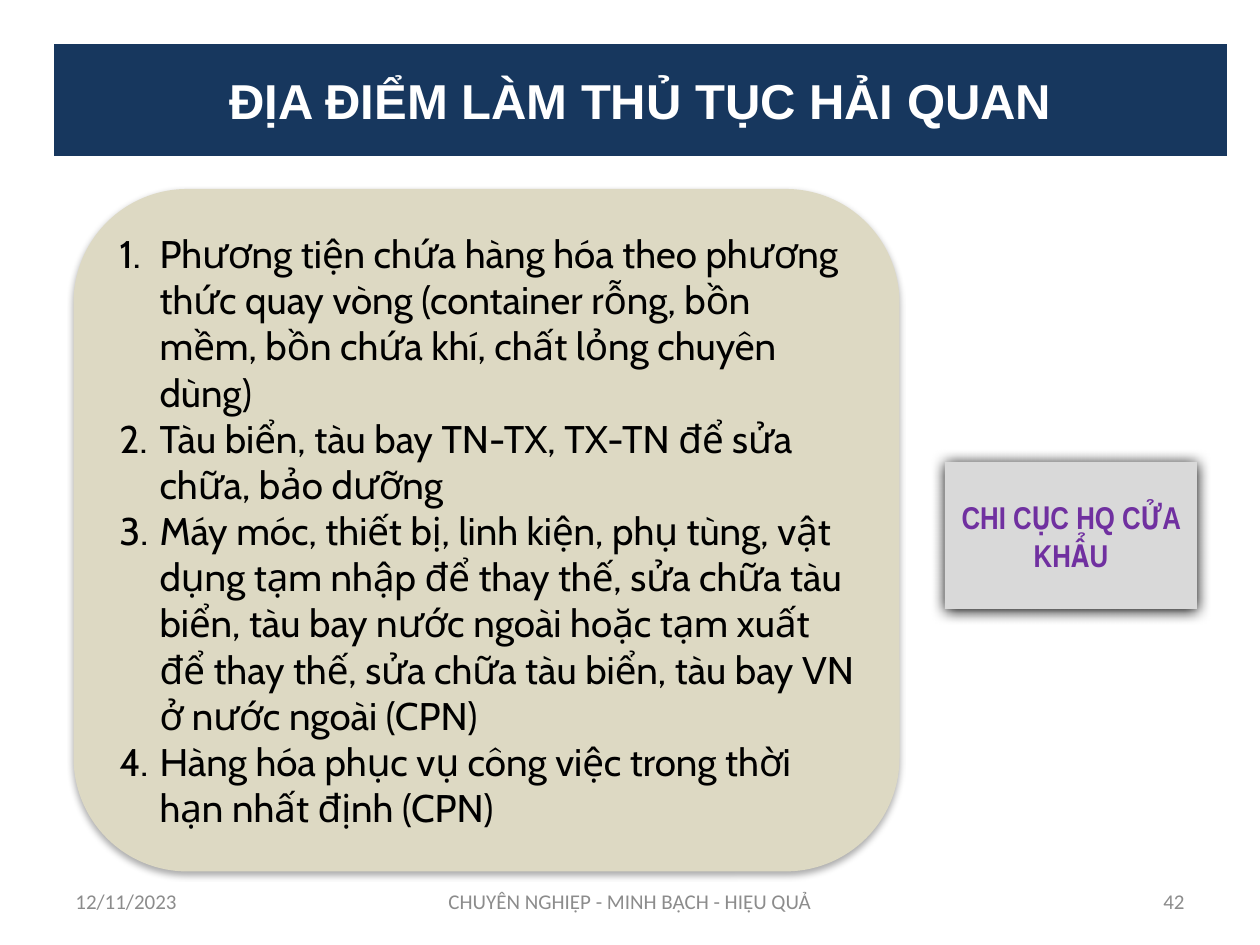
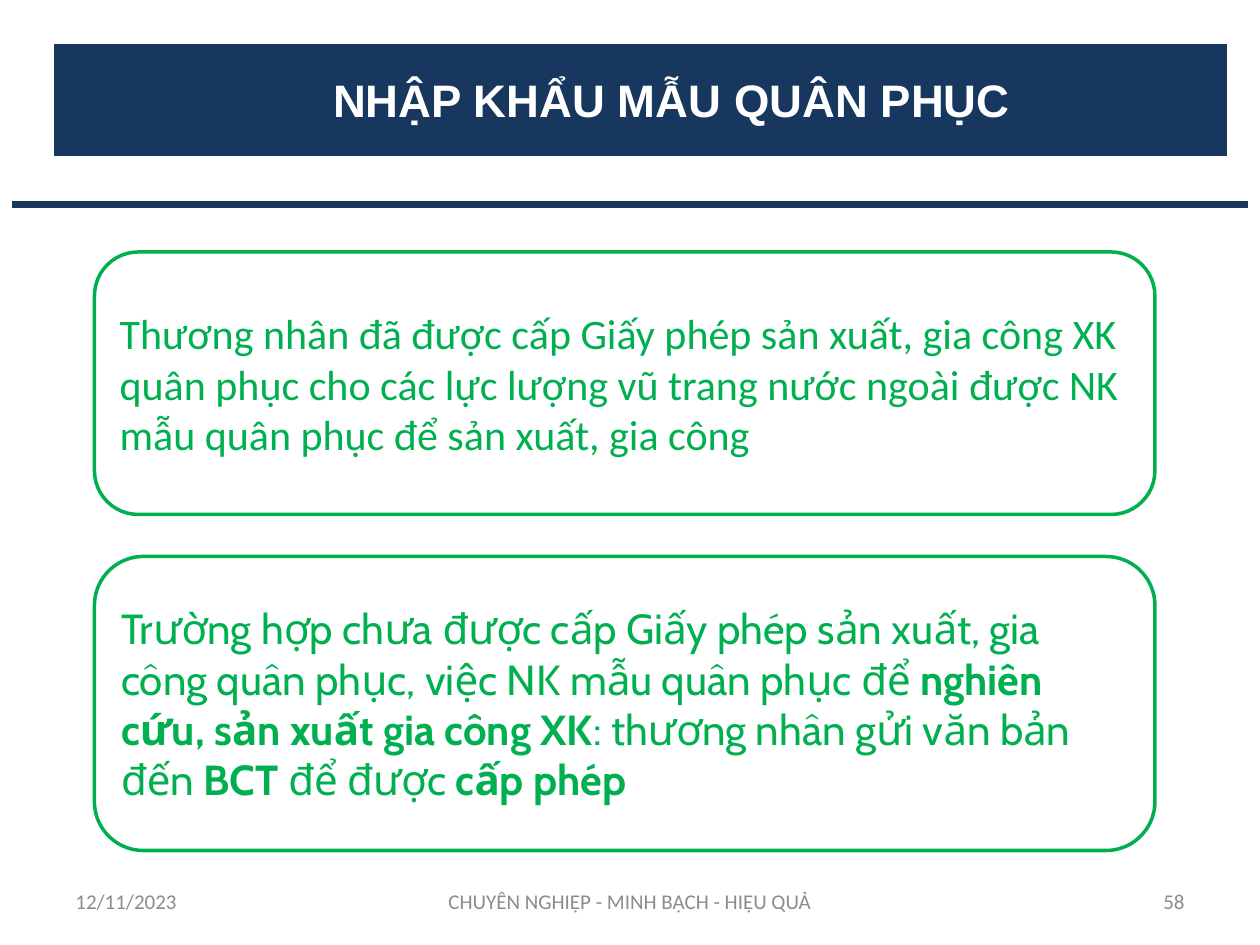
from lxml import etree
from pptx import Presentation
from pptx.dml.color import RGBColor
from pptx.enum import shapes, text
from pptx.oxml import ns
from pptx.util import Pt

NAVY, WHITE, GREEN, GREY = "17375E", "FFFFFF", "00B050", "8C8C8C"
SAND, SILVER, PURPLE, BLACK = "DDD9C3", "D9D9D9", "7030A0", "000000"
LEFT, CENTER, RIGHT = (text.PP_ALIGN.LEFT, text.PP_ALIGN.CENTER,
                       text.PP_ALIGN.RIGHT)
RECT = shapes.MSO_SHAPE.RECTANGLE
ROUND = shapes.MSO_SHAPE.ROUNDED_RECTANGLE
TITLE_AND_BODY, TITLE_ONLY = 1, 5

TITLE_FONT = dict(name="Arial", size=Pt(28), bold=True, color=WHITE)
FOOTER_FONT = dict(name="Calibri", size=Pt(12), color=GREY)
LIST_FONT = dict(name="Cabin", size=Pt(22), color=BLACK)
OFFICE_FONT = dict(name="Arial Narrow", size=Pt(18), bold=True, color=PURPLE)
CASE_FONT = dict(name="Calibri", size=Pt(24), color=GREEN)


def rgb(hex_color):
    return RGBColor.from_string(hex_color)


def sub(parent, tag, **attrs):
    """Add a DrawingML child element with the given attributes."""
    child = etree.SubElement(parent, ns.qn("a:" + tag))
    for key, value in attrs.items():
        child.set(key, str(value))
    return child


class Deck:
    def __init__(self):
        self.prs = Presentation()
        self.prs.slide_width, self.prs.slide_height = Pt(720), Pt(540)
        self.slide = None

    def new_slide(self, layout, title, number, size=28, indent=0):
        """Start a slide with its title band and footer."""
        self.slide = self.prs.slides.add_slide(self.prs.slide_layouts[layout])
        band = self.slide.shapes.title
        self.place(band, (30, 24, 672, 66))
        self.paint(band, NAVY, WHITE)
        self.fill_text(band, [title], dict(TITLE_FONT, size=Pt(size)), CENTER)
        band.text_frame.paragraphs[0]._p.get_or_add_pPr().set(
            "marL", str(Pt(indent)))
        for label, x, w, align in (
                ("12/11/2023", 36, 168, LEFT),
                ("CHUYÊN NGHIỆP - MINH BẠCH - HIỆU QUẢ", 246, 228, CENTER),
                (str(number), 516, 168, RIGHT)):
            sp = self.slide.shapes.add_textbox(Pt(x), Pt(500.5), Pt(w), Pt(28.75))
            self.fill_text(sp, [label], FOOTER_FONT, align)

    def place(self, sp, box):
        for name, value in zip(("left", "top", "width", "height"), box):
            setattr(sp, name, Pt(value))

    def paint(self, sp, fill, line=None):
        sp.fill.solid()
        sp.fill.fore_color.rgb = rgb(fill)
        if line:
            sp.line.color.rgb = rgb(line)
            sp.line.width = Pt(2)
        else:
            sp.line.fill.background()

    def shape(self, kind, box, fill, line=None, shadow=None):
        """Add a preset shape; shadow is (opacity %, blur, distance)."""
        sp = self.slide.shapes.add_shape(kind, *map(Pt, box))
        self.paint(sp, fill, line)
        sp.shadow.inherit = False
        if shadow:
            opacity, blur, dist = shadow
            effects = sp._element.spPr.find(ns.qn("a:effectLst"))
            outer = sub(effects, "outerShdw", blurRad=Pt(blur), dist=Pt(dist),
                        dir=90 * 60000, algn="ctr", rotWithShape=0)
            color = sub(outer, "srgbClr", val=BLACK)
            sub(color, "alpha", val=opacity * 1000)
        return sp

    def fill_text(self, sp, paragraphs, font, align=LEFT):
        """Fill a shape; a paragraph is a string or a list of (text, bold)."""
        tf = sp.text_frame
        tf.word_wrap = True
        tf.auto_size = text.MSO_AUTO_SIZE.NONE
        tf.vertical_anchor = text.MSO_ANCHOR.MIDDLE
        for i, content in enumerate(paragraphs):
            p = tf.add_paragraph() if i else tf.paragraphs[0]
            p.alignment, p.space_before = align, Pt(0)
            if isinstance(content, str):
                content = [(content, font.get("bold", False))]
            for words, bold in content:
                r = p.add_run()
                r.text = words
                for key, value in dict(font, bold=bold).items():
                    if key == "color":
                        r.font.color.rgb = rgb(value)
                    else:
                        setattr(r.font, key, value)

    def numbered_list(self, card, box, items, font):
        """Put the body placeholder on top of its card as a numbered list."""
        body = self.slide.placeholders[1]
        self.place(body, box)
        self.fill_text(body, items, font)
        for p in body.text_frame.paragraphs:
            pPr = p._p.get_or_add_pPr()
            pPr.set("marL", str(Pt(23)))
            pPr.set("indent", str(-Pt(23)))
            sub(pPr, "buFont", typeface="+mj-lt")
            sub(pPr, "buAutoNum", type="arabicPeriod")
        card._element.addnext(body._element)


def customs_places(deck):
    deck.new_slide(TITLE_AND_BODY, "ĐỊA ĐIỂM LÀM THỦ TỤC HẢI QUAN", 42)
    card = deck.shape(ROUND, (42, 108, 472, 390), SAND, shadow=(32, 3.5, 2.2))
    deck.numbered_list(card, (61, 127, 435, 352), [
        "Phương tiện chứa hàng hóa theo phương thức quay vòng (container rỗng, "
        "bồn mềm, bồn chứa khí, chất lỏng chuyên dùng)",
        "Tàu biển, tàu bay TN-TX, TX-TN để sửa chữa, bảo dưỡng",
        "Máy móc, thiết bị, linh kiện, phụ tùng, vật dụng tạm nhập để thay thế, "
        "sửa chữa tàu biển, tàu bay nước ngoài hoặc tạm xuất để thay thế, "
        "sửa chữa tàu biển, tàu bay VN ở nước ngoài (CPN)",
        "Hàng hóa phục vụ công việc trong thời hạn nhất định (CPN)",
    ], LIST_FONT)
    office = deck.shape(RECT, (540, 264, 144, 84), SILVER, shadow=(100, 8.5, 1))
    deck.fill_text(office, ["CHI CỤC HQ CỬA KHẨU"], OFFICE_FONT, CENTER)


def uniform_samples(deck):
    deck.new_slide(TITLE_ONLY, "NHẬP KHẨU MẪU QUÂN PHỤC", 58, size=26, indent=36)
    deck.shape(RECT, (6, 114, 708, 6), NAVY, WHITE)
    licensed = ("Thương nhân đã được cấp Giấy phép sản xuất, gia công XK quân phục "
                "cho các lực lượng vũ trang nước ngoài được NK mẫu quân phục "
                "để sản xuất, gia công")
    unlicensed = [
        ("Trường hợp chưa được cấp Giấy phép sản xuất, gia công quân phục, "
         "việc NK mẫu quân phục để ", False),
        ("nghiên cứu, sản xuất gia công XK", True),
        (": thương nhân gửi văn bản đến ", False),
        ("BCT ", True),
        ("để được ", False),
        ("cấp phép", True),
    ]
    for top, height, font_name, content in (
            (144, 150, "Calibri", licensed), (318, 168, "Cabin", unlicensed)):
        case = deck.shape(ROUND, (54, top, 606, height), WHITE, GREEN)
        deck.fill_text(case, [content], dict(CASE_FONT, name=font_name))


def main():
    deck = Deck()
    customs_places(deck)
    uniform_samples(deck)
    deck.prs.save("out.pptx")


if __name__ == "__main__":
    main()
